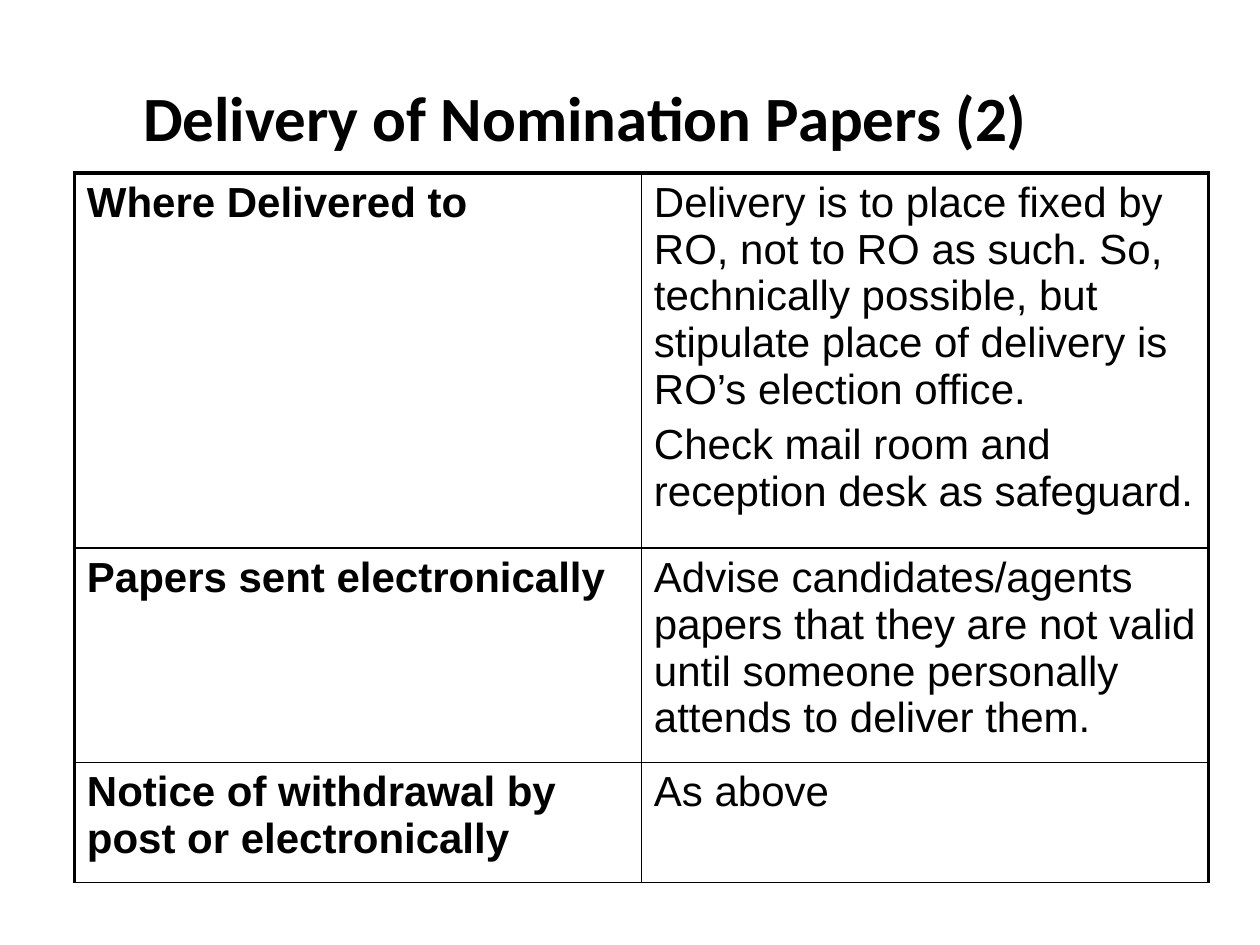
from dataclasses import dataclass

import pptx
import pptx.dml.color
import pptx.enum.text
import pptx.oxml
import pptx.oxml.ns
import pptx.presentation
import pptx.slide
import pptx.table
import pptx.util

BLACK = pptx.dml.color.RGBColor(0x00, 0x00, 0x00)
SLIDE_W = pptx.util.Inches(10)
SLIDE_H = pptx.util.Inches(7.5)
OUTER_PT, INNER_PT = 2.25, 1
BODY_PT = 24


@dataclass(frozen=True)
class Row:
    heading: str
    details: tuple[str, ...]
    height: float  # share of the slide height


ROWS = (
    Row(
        "Where Delivered to",
        (
            "Delivery is to place fixed by RO, not to RO as such. So, technically "
            "possible, but stipulate place of delivery is RO’s election office.",
            "Check mail room and reception desk as safeguard.",
        ),
        0.397,
    ),
    Row(
        "Papers sent electronically",
        (
            "Advise candidates/agents papers that they are not valid until "
            "someone personally attends to deliver them.",
        ),
        0.227,
    ),
    Row("Notice of withdrawal by post or electronically", ("As above",), 0.127),
)


def place(s, left: float, top: float, width: float, height: float) -> None:
    """Position a shape by shares of the slide size."""
    s.left, s.width = int(SLIDE_W * left), int(SLIDE_W * width)
    s.top, s.height = int(SLIDE_H * top), int(SLIDE_H * height)


def style_run(r, font: str, size: float, bold: bool) -> None:
    r.font.name = font
    r.font.size = pptx.util.Pt(size)
    r.font.bold = bold
    r.font.color.rgb = BLACK


def add_title(slide: pptx.slide.Slide, text: str) -> None:
    s = slide.shapes.title
    place(s, 0.043, 0.04, 0.843, 0.167)
    tf = s.text_frame
    tf.vertical_anchor = pptx.enum.text.MSO_ANCHOR.MIDDLE
    p = tf.paragraphs[0]
    p.alignment = pptx.enum.text.PP_ALIGN.CENTER
    r = p.add_run()
    r.text = text
    style_run(r, "Calibri", 36, True)


def set_borders(cell, widths: dict[str, float]) -> None:
    """Draw solid borders; widths are in points, keyed L, R, T, B in that order."""
    tc_pr = cell._tc.get_or_add_tcPr()
    for i, (side, width) in enumerate(widths.items()):
        tc_pr.insert(i, pptx.oxml.parse_xml(
            f'<a:ln{side} {pptx.oxml.ns.nsdecls("a")} w="{pptx.util.Pt(width)}">'
            f'<a:solidFill><a:srgbClr val="{BLACK}"/></a:solidFill></a:ln{side}>'
        ))


def fill_cell(cell, texts: tuple[str, ...], bold: bool) -> None:
    cell.fill.background()
    tf = cell.text_frame
    for i, text in enumerate(texts):
        p = tf.add_paragraph() if i else tf.paragraphs[0]
        p.space_before = pptx.util.Pt(0.2 * BODY_PT if i else 0)
        r = p.add_run()
        r.text = text
        style_run(r, "Arial", BODY_PT, bold)


def add_delivery_table(slide: pptx.slide.Slide, rows: tuple[Row, ...]) -> None:
    s = slide.shapes.add_table(len(rows), 2, 0, 0, int(SLIDE_W * 0.9), SLIDE_H)
    place(s, 0.059, 0.183, 0.9, sum(row.height for row in rows))
    table = s.table
    table.first_row = table.horz_banding = False
    for i, row in enumerate(rows):
        table.rows[i].height = int(SLIDE_H * row.height)
        for j, texts in enumerate(((row.heading,), row.details)):
            cell = table.cell(i, j)
            fill_cell(cell, texts, bold=j == 0)
            set_borders(cell, {
                "L": OUTER_PT if j == 0 else INNER_PT,
                "R": OUTER_PT if j == 1 else INNER_PT,
                "T": OUTER_PT if i == 0 else INNER_PT,
                "B": INNER_PT,
            })


def main() -> None:
    prs = pptx.Presentation()
    prs.slide_width, prs.slide_height = SLIDE_W, SLIDE_H
    slide = prs.slides.add_slide(prs.slide_layouts.get_by_name("Title Only"))
    add_title(slide, "Delivery of Nomination Papers (2)")
    add_delivery_table(slide, ROWS)
    prs.save("out.pptx")


if __name__ == "__main__":
    main()
